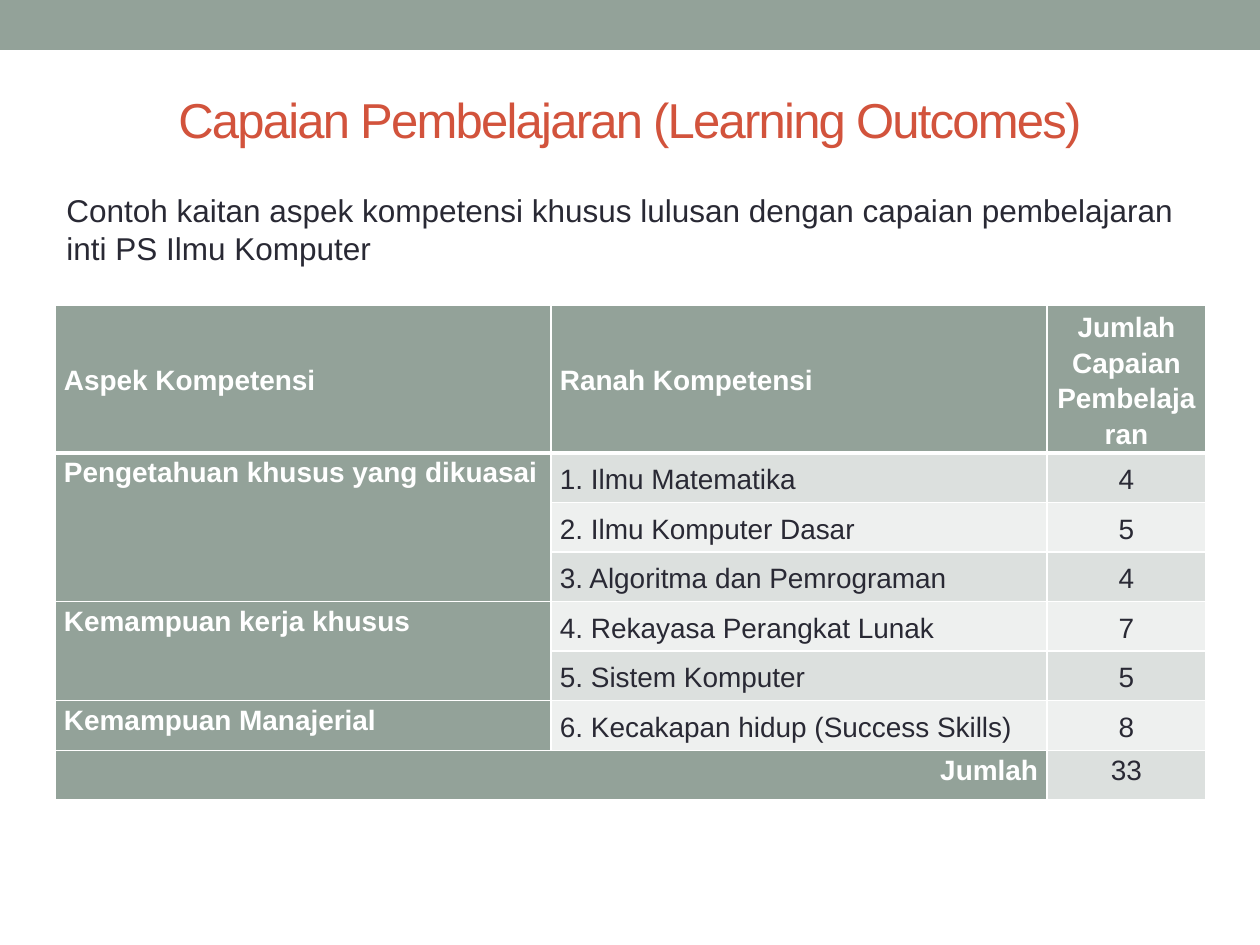
from lxml import etree
from pptx import Presentation
from pptx.dml.color import RGBColor
from pptx.enum.shapes import MSO_SHAPE
from pptx.enum.text import MSO_ANCHOR, MSO_AUTO_SIZE, PP_ALIGN
from pptx.oxml.ns import qn
from pptx.util import Inches, Pt

RECTANGLE = MSO_SHAPE.RECTANGLE
LEFT, CENTER, RIGHT, JUSTIFY = PP_ALIGN.LEFT, PP_ALIGN.CENTER, PP_ALIGN.RIGHT, PP_ALIGN.JUSTIFY
TOP, MIDDLE = MSO_ANCHOR.TOP, MSO_ANCHOR.MIDDLE
NO_AUTOFIT = MSO_AUTO_SIZE.NONE

SAGE = RGBColor(0x93, 0xA2, 0x99)
BAND_DARK = RGBColor(0xDC, 0xE0, 0xDE)
BAND_LIGHT = RGBColor(0xEE, 0xF0, 0xEF)
WHITE = RGBColor(0xFF, 0xFF, 0xFF)
INK = RGBColor(0x29, 0x29, 0x34)
RUST = RGBColor(0xD2, 0x53, 0x3C)

HEADINGS = ["Aspek Kompetensi", "Ranah Kompetensi", "Jumlah Capaian Pembelajaran"]
ASPECTS = [
    ("Pengetahuan khusus yang dikuasai", LEFT,
     [("1. Ilmu Matematika", 4), ("2. Ilmu Komputer Dasar", 5), ("3. Algoritma dan Pemrograman", 4)]),
    ("Kemampuan kerja khusus", JUSTIFY,
     [("4. Rekayasa Perangkat Lunak", 7), ("5. Sistem Komputer", 5)]),
    ("Kemampuan Manajerial", JUSTIFY,
     [("6. Kecakapan hidup (Success Skills)", 8)]),
]


def px(length):
    """Convert px, at 126 to the inch, to EMU."""
    return Inches(length / 126)


class SlideBuilder:
    """Holds the slide and its text style."""

    font_name = "Arial"

    def __init__(self, slide):
        self.slide = slide

    def style(self, paragraph, size, color, align=LEFT, bold=False):
        paragraph.alignment = align
        font = paragraph.font
        font.name, font.size, font.bold = self.font_name, Pt(size), bold
        font.color.rgb = color

    def band(self, left, top, width, height, color):
        band = self.slide.shapes.add_shape(RECTANGLE, px(left), px(top), px(width), px(height))
        band.shadow.inherit = False
        band.fill.solid()
        band.fill.fore_color.rgb = color
        band.line.fill.background()

    def title(self, left, top, width, height, text):
        title = self.slide.shapes.title
        title.left, title.top, title.width, title.height = map(px, (left, top, width, height))
        frame = title.text_frame
        frame.text = text
        frame.auto_size = NO_AUTOFIT
        frame.vertical_anchor = MIDDLE
        self.style(frame.paragraphs[0], 28, RUST, CENTER)
        frame.paragraphs[0].runs[0].font._element.set("spc", "-100")

    def text(self, left, top, width, height, text):
        frame = self.slide.shapes.add_textbox(px(left), px(top), px(width), px(height)).text_frame
        frame.word_wrap = True
        frame.text = text
        self.style(frame.paragraphs[0], 18, INK)

    def table(self, left, top, column_widths, header_height, body_height, row_count):
        frame = self.slide.shapes.add_table(
            row_count, len(column_widths), px(left), px(top),
            px(sum(column_widths)), px(header_height + body_height))
        table = frame.table
        for column, width in zip(table.columns, column_widths):
            column.width = px(width)
        for row in table.rows:
            row.height = px(body_height) // (row_count - 1)
        table.rows[0].height = px(header_height)
        for row_index, row in enumerate(table.rows):
            for cell in row.cells:
                self.borders(cell, top=3 if row_index == 1 else 1,
                             bottom=3 if row_index == 0 else 1)
        return table

    def borders(self, cell, top, bottom):
        properties = cell._tc.get_or_add_tcPr()
        sides = [("a:lnL", 1), ("a:lnR", 1), ("a:lnT", top), ("a:lnB", bottom)]
        for position, (tag, points) in enumerate(sides):
            line = etree.Element(qn(tag), w=str(Pt(points)))
            fill = etree.SubElement(line, qn("a:solidFill"))
            etree.SubElement(fill, qn("a:srgbClr"), val=str(WHITE))
            properties.insert(position, line)

    def cell(self, cell, text, fill, align=LEFT, anchor=MIDDLE):
        """Fill a cell; sage cells are headings with bold white text."""
        heading = fill == SAGE
        cell.text = str(text)
        cell.fill.solid()
        cell.fill.fore_color.rgb = fill
        cell.vertical_anchor = anchor
        cell.margin_left = cell.margin_right = px(9)
        cell.margin_top = cell.margin_bottom = 0
        paragraph = cell.text_frame.paragraphs[0]
        paragraph.line_spacing = 1.15
        self.style(paragraph, 16, WHITE if heading else INK, align, heading)


def main():
    presentation = Presentation()
    presentation.slide_width, presentation.slide_height = px(1260), px(945)
    title_only = presentation.slide_layouts[5]
    builder = SlideBuilder(presentation.slides.add_slide(title_only))

    builder.band(0, 0, 1260, 50, SAGE)
    builder.title(63, 73, 1134, 92, "Capaian Pembelajaran (Learning Outcomes)")

    total_row = 1 + sum(len(domains) for _, _, domains in ASPECTS)
    table = builder.table(55, 305, [496, 496, 159], 148, 347, total_row + 1)
    for column, heading in enumerate(HEADINGS):
        builder.cell(table.cell(0, column), heading, SAGE, CENTER if column == 2 else LEFT)

    row = 1
    for aspect, align, domains in ASPECTS:
        aspect_cell = table.cell(row, 0)
        if len(domains) > 1:
            aspect_cell.merge(table.cell(row + len(domains) - 1, 0))
        builder.cell(aspect_cell, aspect, SAGE, align, TOP)
        for domain, count in domains:
            shade = BAND_DARK if row % 2 else BAND_LIGHT
            builder.cell(table.cell(row, 1), domain, shade)
            builder.cell(table.cell(row, 2), count, shade, CENTER)
            row += 1

    total_label = table.cell(total_row, 0)
    total_label.merge(table.cell(total_row, 1))
    builder.cell(total_label, "Jumlah", SAGE, RIGHT, TOP)
    total = sum(count for _, _, domains in ASPECTS for _, count in domains)
    builder.cell(table.cell(total_row, 2), total, BAND_DARK, CENTER, TOP)

    builder.text(54, 185, 1160, 89,
                 "Contoh kaitan aspek kompetensi khusus lulusan dengan capaian "
                 "pembelajaran inti PS Ilmu Komputer")
    presentation.save("out.pptx")


if __name__ == "__main__":
    main()
